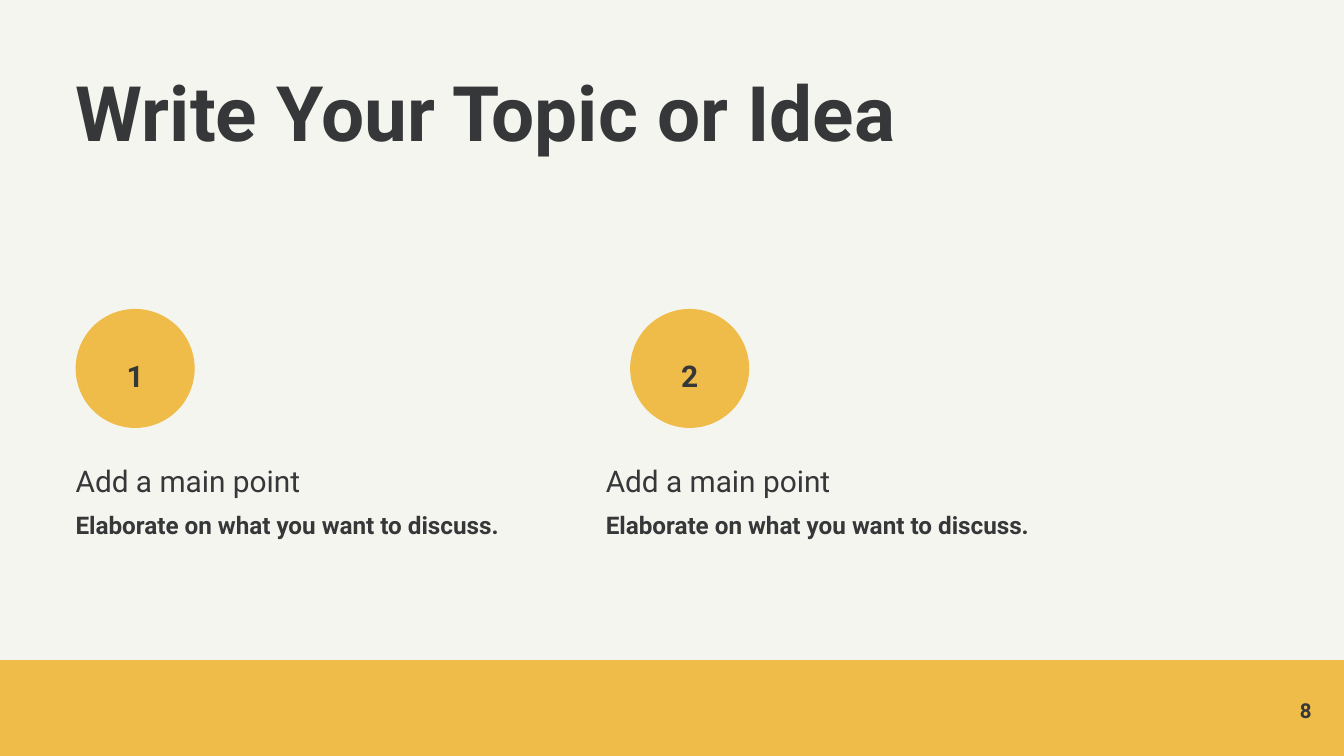
from pptx import Presentation
from pptx import util as u
from pptx.dml import color
from pptx.enum import shapes, text

INK, GOLD, PAPER = "363739", "EFBC49", "F5F5EF"


def paint(fill, shade):
    fill.solid()
    fill.fore_color.rgb = color.RGBColor.from_string(shade)


def write(box, lines, align=text.PP_ALIGN.LEFT, anchor=text.MSO_ANCHOR.TOP, spacing=1.0):
    frame = box.text_frame
    frame.word_wrap = True
    frame.auto_size = text.MSO_AUTO_SIZE.NONE
    frame.vertical_anchor = anchor
    frame.margin_left = frame.margin_right = frame.margin_top = frame.margin_bottom = 0
    for index, (words, size, bold) in enumerate(lines):
        para = frame.add_paragraph() if index else frame.paragraphs[0]
        para.alignment = align
        para.line_spacing = spacing
        para.space_before = u.Pt(0)
        span = para.add_run()
        span.text = words
        span.font.name = "Roboto"
        span.font.size = u.Pt(size)
        span.font.bold = bold
        span.font.color.rgb = color.RGBColor.from_string(INK)


deck = Presentation()
deck.slide_width, deck.slide_height = u.Cm(25.4), u.Cm(14.29)
slide = deck.slides.add_slide(deck.slide_layouts[5])
paint(slide.background.fill, PAPER)

title = slide.shapes.title
title.left, title.top, title.width, title.height = u.Cm(1.43), u.Cm(1.43), u.Cm(18), u.Cm(2)
write(title, [("Write Your Topic or Idea", 41, True)], spacing=0.9)

band = slide.shapes.add_shape(
    shapes.MSO_SHAPE.RECTANGLE, 0, u.Cm(12.48), deck.slide_width, u.Cm(1.81))
circles = []
for number, circle_left, point_left in [("1", 1.43, 1.43), ("2", 11.91, 11.45)]:
    circles.append(slide.shapes.add_shape(
        shapes.MSO_SHAPE.OVAL, u.Cm(circle_left), u.Cm(5.84), u.Cm(2.25), u.Cm(2.25)))
    label = slide.shapes.add_textbox(
        u.Cm(circle_left + 0.59), u.Cm(6.6), u.Cm(1.07), u.Cm(0.69))
    write(label, [(number, 16, True)], align=text.PP_ALIGN.CENTER, spacing=1.25)
    point = slide.shapes.add_textbox(u.Cm(point_left), u.Cm(8.48), u.Cm(8.79), u.Cm(3.89))
    write(point, [("Add a main point", 16, False),
                  ("Elaborate on what you want to discuss.", 13, True)], spacing=1.4)

for shape in [band, *circles]:
    shape.shadow.inherit = False
    paint(shape.fill, GOLD)
    shape.line.fill.background()

page_number = slide.shapes.add_textbox(u.Cm(23.27), u.Cm(13.18), u.Cm(1.52), u.Cm(0.51))
write(page_number, [("8", 11, True)], align=text.PP_ALIGN.RIGHT, anchor=text.MSO_ANCHOR.MIDDLE)

deck.save("out.pptx")
